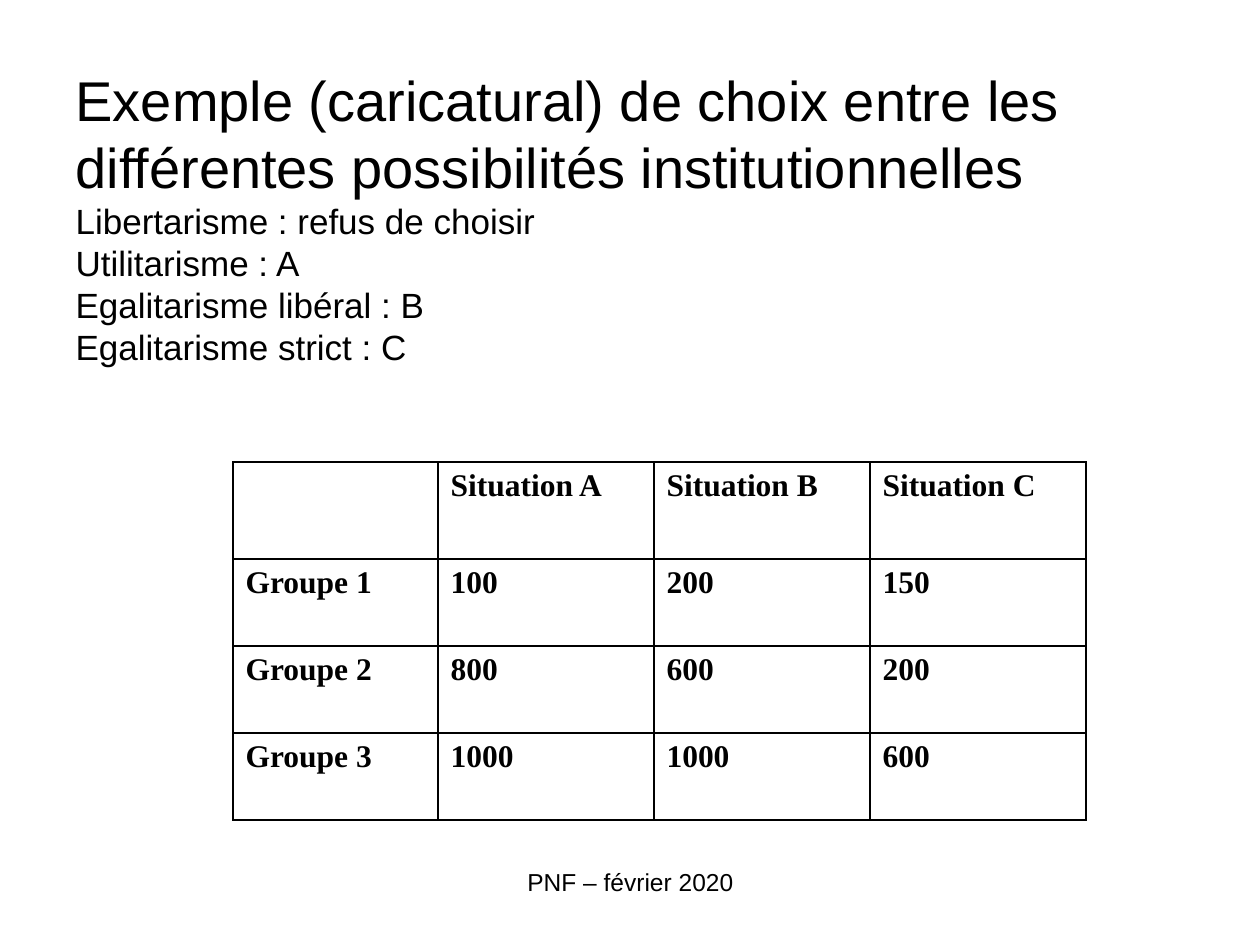
from copy import deepcopy

from lxml.etree import SubElement
from pptx import Presentation
from pptx.dml.color import RGBColor
from pptx.enum.text import MSO_ANCHOR as Anchor, MSO_AUTO_SIZE as Fit, PP_ALIGN as Align
from pptx.oxml.ns import qn
from pptx.util import Emu, Pt

SCALE = 914400 / 126
BLACK = RGBColor(0, 0, 0)
WHITE = RGBColor(255, 255, 255)
SANS = "Arial"
SERIF = "Times New Roman"

HEAD = "Exemple (caricatural) de choix entre les différentes possibilités institutionnelles"
VIEWS = [
    "Libertarisme : refus de choisir",
    "Utilitarisme : A",
    "Egalitarisme libéral : B",
    "Egalitarisme strict : C",
]
GRID = [
    ["", "Situation A", "Situation B", "Situation C"],
    ["Groupe 1", "100", "200", "150"],
    ["Groupe 2", "800", "600", "200"],
    ["Groupe 3", "1000", "1000", "600"],
]


def px(num):
    return Emu(round(num * SCALE))


def add_run(para, text, size, face=SANS, bold=False):
    run = para.add_run()
    run.text = text
    font = run.font
    font.size, font.name, font.bold = Pt(size), face, bold
    font.color.rgb = BLACK
    return run


def add_break(para, run):
    para.add_line_break()
    para._p[-1].append(deepcopy(run._r.rPr))


def add_title(slide, box):
    title = slide.shapes.title
    title.left, title.top, title.width, title.height = map(px, box)
    frame = title.text_frame
    frame.word_wrap = True
    frame.auto_size = Fit.NONE
    frame.vertical_anchor = Anchor.MIDDLE
    para = frame.paragraphs[0]
    para.alignment = Align.LEFT
    run = add_run(para, HEAD, 32)
    for view in VIEWS:
        add_break(para, run)
        run = add_run(para, view, 20)


def add_edges(cell):
    props = cell._tc.get_or_add_tcPr()
    for side in ("lnL", "lnR", "lnT", "lnB"):
        line = SubElement(props, qn(f"a:{side}"), w=str(Pt(1)))
        fill = SubElement(line, qn("a:solidFill"))
        SubElement(fill, qn("a:srgbClr"), val=str(BLACK))


def fill_cell(cell, text):
    add_edges(cell)
    cell.fill.solid()
    cell.fill.fore_color.rgb = WHITE
    para = cell.text_frame.paragraphs[0]
    para.alignment = Align.JUSTIFY
    props = para._p.get_or_add_pPr()
    props.set("marL", str(px(48)))
    props.set("indent", str(px(-48)))
    if text:
        add_run(para, text, 18, SERIF, True)


def add_grid(slide, box):
    left, top, width, height = box
    rows, cols = len(GRID), len(GRID[0])
    table = slide.shapes.add_table(rows, cols, *map(px, box)).table
    wide, tall = 216, 87
    for i, col in enumerate(table.columns):
        col.width = px(wide if i else width - wide * (cols - 1))
    for i, row in enumerate(table.rows):
        row.height = px(tall if i else height - tall * (rows - 1))
    for i, line in enumerate(GRID):
        for j, text in enumerate(line):
            fill_cell(table.cell(i, j), text)


def add_foot(slide, box):
    frame = slide.shapes.add_textbox(*map(px, box)).text_frame
    frame.word_wrap = True
    para = frame.paragraphs[0]
    para.alignment = Align.CENTER
    add_run(para, "PNF – février 2020", 14)


def main():
    deck = Presentation()
    deck.slide_width, deck.slide_height = px(1260), px(945)
    slide = deck.slides.add_slide(deck.slide_layouts[5])
    add_foot(slide, (431, 861, 399, 66))
    add_title(slide, (63, 38, 1134, 357))
    add_grid(slide, (233, 462, 853, 358))
    deck.save("out.pptx")


if __name__ == "__main__":
    main()
